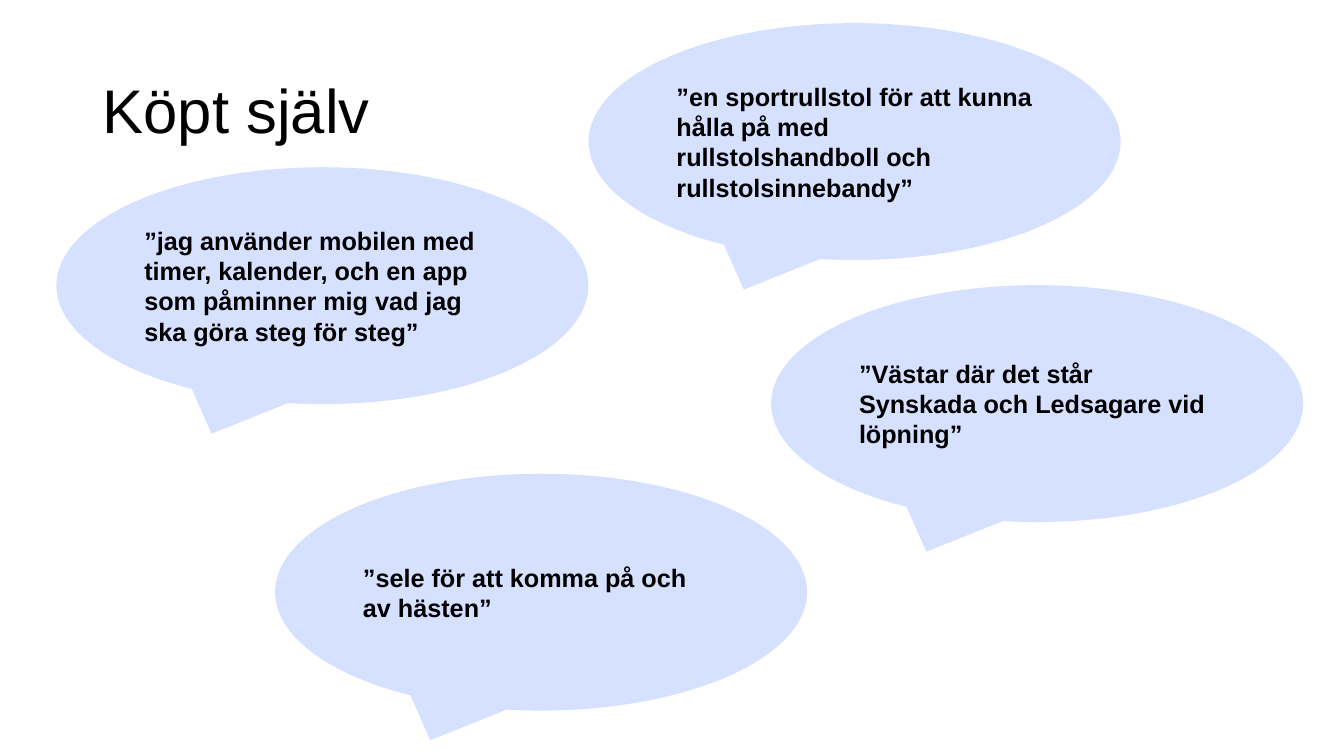
from pptx import Presentation
from pptx.dml.color import RGBColor
from pptx.enum.shapes import MSO_SHAPE
from pptx.enum.text import MSO_ANCHOR, PP_ALIGN
from pptx.util import Inches, Pt

CALLOUT = MSO_SHAPE.OVAL_CALLOUT
MIDDLE = MSO_ANCHOR.MIDDLE
LEFT = PP_ALIGN.LEFT

WIDTH, HEIGHT = Inches(13.33), Inches(7.5)
FONT = "Arial"
COLORS = {"bubble": "D6E0FF", "text": "000000"}
BUBBLE_SIZE = (39.58, 31.33)
QUOTES = [
    (20.47, 62.67, "”sele för att komma på och av hästen”"),
    (4.2, 22.13, "”jag använder mobilen med timer, kalender, och en app "
                 "som påminner mig vad jag ska göra steg för steg”"),
    (57.38, 37.73, "”Västar där det står Synskada och Ledsagare vid löpning”"),
    (43.8, 3.07, "”en sportrullstol för att kunna hålla på med "
                 "rullstolshandboll och rullstolsinnebandy”"),
]


def box(x, y, w, h):
    return [int(size * share / 100)
            for size, share in zip((WIDTH, HEIGHT, WIDTH, HEIGHT), (x, y, w, h))]


def write(sp, text, size, bold=False, spacing=1.0):
    tf = sp.text_frame
    tf.word_wrap = True
    tf.vertical_anchor = MIDDLE
    p = tf.paragraphs[0]
    p.alignment = LEFT
    p.line_spacing = spacing
    r = p.add_run()
    r.text = text
    r.font.name = FONT
    r.font.size = Pt(size)
    r.font.bold = bold
    r.font.color.rgb = RGBColor.from_string(COLORS["text"])


def add_title(s, text):
    sp = s.shapes.add_textbox(*box(6.9, 5.33, 84.75, 19.33))
    write(sp, text, 44, spacing=0.9)


def add_bubble(s, x, y, text):
    sp = s.shapes.add_shape(CALLOUT, *box(x, y, *BUBBLE_SIZE))
    sp.shadow.inherit = False
    sp.fill.solid()
    sp.fill.fore_color.rgb = RGBColor.from_string(COLORS["bubble"])
    sp.line.fill.background()
    write(sp, text, 18, bold=True)


def main():
    prs = Presentation()
    prs.slide_width, prs.slide_height = WIDTH, HEIGHT
    s = prs.slides.add_slide(prs.slide_layouts[6])
    add_title(s, "Köpt själv")
    for x, y, text in QUOTES:
        add_bubble(s, x, y, text)
    prs.save("out.pptx")


if __name__ == "__main__":
    main()
